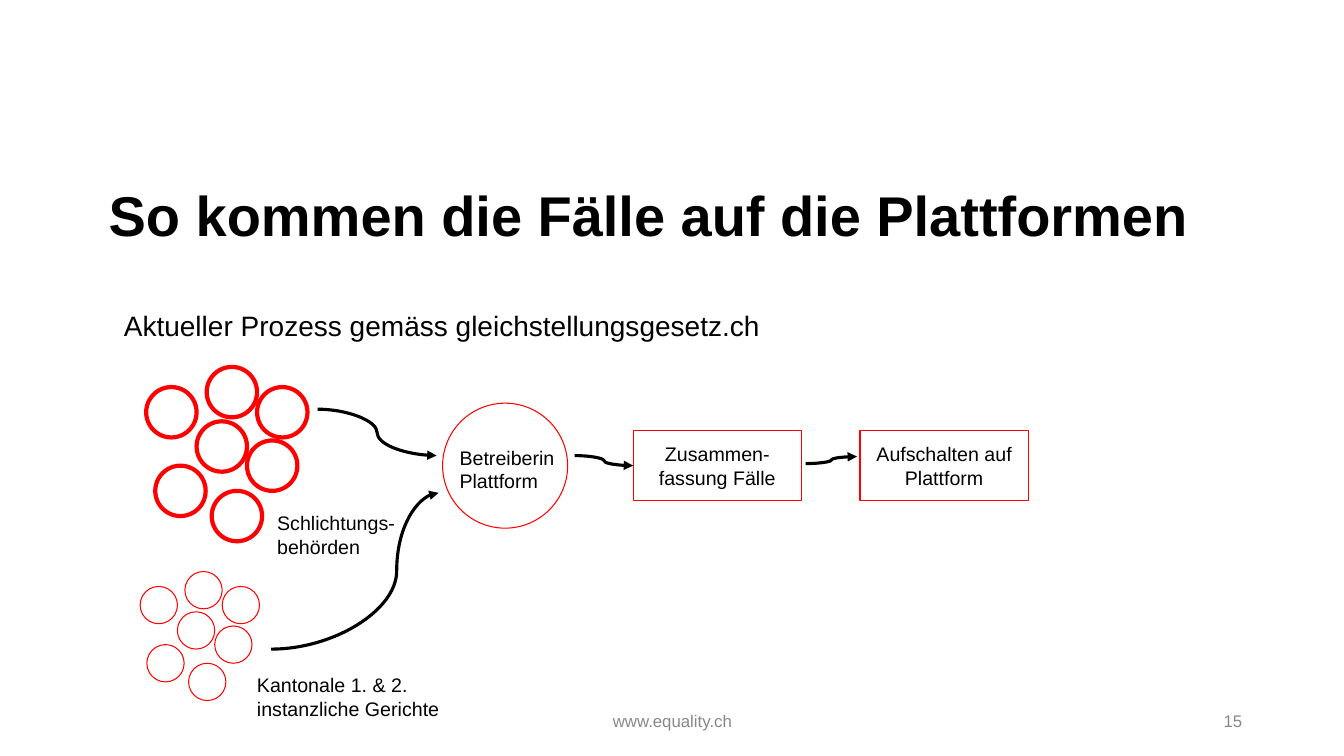
import dataclasses

import lxml.etree
import pptx
import pptx.dml.color
import pptx.enum.shapes
import pptx.enum.text
import pptx.oxml.ns
import pptx.util

Inches = pptx.util.Inches
Pt = pptx.util.Pt
qn = pptx.oxml.ns.qn
Align = pptx.enum.text.PP_ALIGN
Anchor = pptx.enum.text.MSO_ANCHOR
Shape = pptx.enum.shapes.MSO_SHAPE


@dataclasses.dataclass(frozen=True)
class Theme:
    font: str = "Arial"
    ink: str = "000000"
    muted: str = "888888"
    accent: str = "FF0000"
    title: float = 40
    subtitle: float = 20
    label: float = 14
    footer: float = 12
    thin: float = 0.75
    arrow: float = 2.25
    thick: float = 3


THEME = Theme()

# Circle positions in a cluster, in diameters from its top left corner
CLUSTER = [(1.2, 0), (2.2, 0.4), (1, 1.08), (2, 1.46), (0, 0.4), (0.18, 1.96), (1.3, 2.46)]


def rgb(value):
    return pptx.dml.color.RGBColor.from_string(value)


def write(shape, lines, size, color=THEME.ink, bold=False, align=Align.LEFT,
          anchor=Anchor.TOP, inset=0.05, spacing=None):
    frame = shape.text_frame
    frame.word_wrap = True
    frame.vertical_anchor = anchor
    frame.margin_left = frame.margin_right = Inches(0.1)
    frame.margin_top = frame.margin_bottom = Inches(inset)
    for index, line in enumerate(lines):
        para = frame.paragraphs[0] if index == 0 else frame.add_paragraph()
        para.alignment = align
        para.line_spacing = spacing
        span = para.add_run()
        span.text = line
        span.font.name = THEME.font
        span.font.size = Pt(size)
        span.font.bold = bold
        span.font.color.rgb = rgb(color)


def add_text(page, box, lines, size, **style):
    write(page.shapes.add_textbox(*map(Inches, box)), lines, size, **style)


def add_label(page, box, lines):
    add_text(page, box, lines, THEME.label, inset=0.1)


def add_outline(page, kind, box, width=THEME.thin):
    shape = page.shapes.add_shape(kind, *map(Inches, box))
    shape.shadow.inherit = False
    shape.fill.background()
    shape.line.color.rgb = rgb(THEME.accent)
    shape.line.width = Pt(width)
    return shape


def add_cluster(page, left, top, diameter, width):
    for across, down in CLUSTER:
        box = (left + across * diameter, top + down * diameter, diameter, diameter)
        add_outline(page, Shape.OVAL, box, width)


def add_step(page, box, lines):
    step = add_outline(page, Shape.RECTANGLE, box)
    write(step, lines, THEME.label, align=Align.CENTER, anchor=Anchor.MIDDLE, inset=0.1)


def add_arrow(page, start, end, bend=0.5):
    kind = pptx.enum.shapes.MSO_CONNECTOR.CURVE
    arrow = page.shapes.add_connector(kind, *map(Inches, start + end))
    arrow.line.color.rgb = rgb(THEME.ink)
    arrow.line.width = Pt(THEME.arrow)
    properties = arrow.element.spPr
    # Bend position, arrowhead and no shadow
    guides = properties.find(qn("a:prstGeom")).find(qn("a:avLst"))
    lxml.etree.SubElement(guides, qn("a:gd"), name="adj1", fmla=f"val {round(bend * 100000)}")
    lxml.etree.SubElement(properties.find(qn("a:ln")), qn("a:tailEnd"), type="triangle")
    lxml.etree.SubElement(properties, qn("a:effectLst"))


def add_heading(page, left, top):
    add_text(page, (left, top, 12.03, 1.13), ["So kommen die Fälle auf die Plattformen"],
             THEME.title, bold=True, anchor=Anchor.MIDDLE, spacing=0.9)
    add_text(page, (left + 0.15, top + 1.36, 9.03, 0.55),
             ["Aktueller Prozess gemäss gleichstellungsgesetz.ch"], THEME.subtitle, spacing=1.15)


def add_footer(page, left, top):
    style = {"color": THEME.muted, "anchor": Anchor.MIDDLE}
    add_text(page, (left, top, 4.5, 0.4), ["www.equality.ch"], THEME.footer,
             align=Align.CENTER, **style)
    add_text(page, (left + 5, top, 3, 0.4), ["15"], THEME.footer, align=Align.RIGHT, **style)


def add_process(page, left, top):
    def at(across, down, *size):
        return (left + across, top + down, *size)

    # Sources of the cases
    add_cluster(page, *at(0.06, 0), 0.5, THEME.thick)
    add_cluster(page, *at(0, 2.03), 0.37, THEME.thin)
    add_label(page, at(1.26, 1.33, 2.19, 0.4), ["Schlichtungs-", "behörden"])
    add_label(page, at(1.06, 2.94, 2.19, 0.4), ["Kantonale 1. & 2. instanzliche Gerichte"])

    # Platform operator
    add_outline(page, Shape.OVAL, at(3, 0.36, 1.24, 1.24))
    add_label(page, at(3.07, 0.68, 1.24, 0.4), ["Betreiberin", "Plattform"])

    # Steps up to publication
    steps = [["Zusammen-", "fassung Fälle"], ["Aufschalten auf Plattform"]]
    for index, lines in enumerate(steps):
        add_step(page, at(4.89 + 2.25 * index, 0.63, 1.67, 0.7), lines)

    # Flow
    add_arrow(page, at(1.76, 0.42), at(2.94, 0.88))
    add_arrow(page, at(1.3, 2.8), at(2.96, 1.25), bend=0.75)
    add_arrow(page, at(4.31, 0.88), at(4.89, 0.98))
    add_arrow(page, at(6.6, 0.96), at(7.11, 0.89))


def main():
    deck = pptx.Presentation()
    deck.slide_width = Inches(13.33)
    deck.slide_height = Inches(7.5)
    page = deck.slides.add_slide(deck.slide_layouts[6])
    add_heading(page, 0.98, 1.6)
    add_footer(page, 4.42, 6.95)
    add_process(page, 1.39, 3.64)
    deck.save("out.pptx")


if __name__ == "__main__":
    main()
